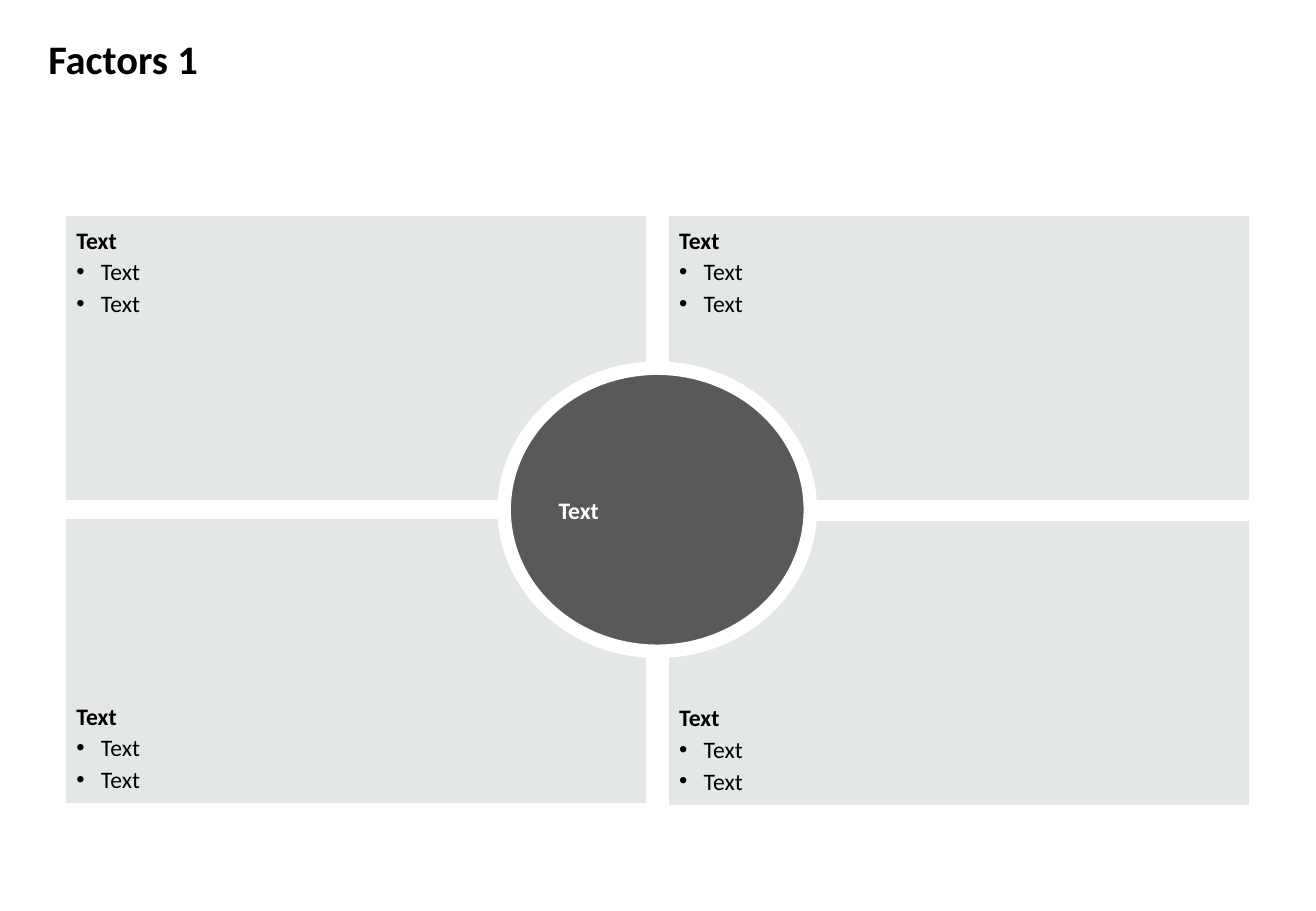
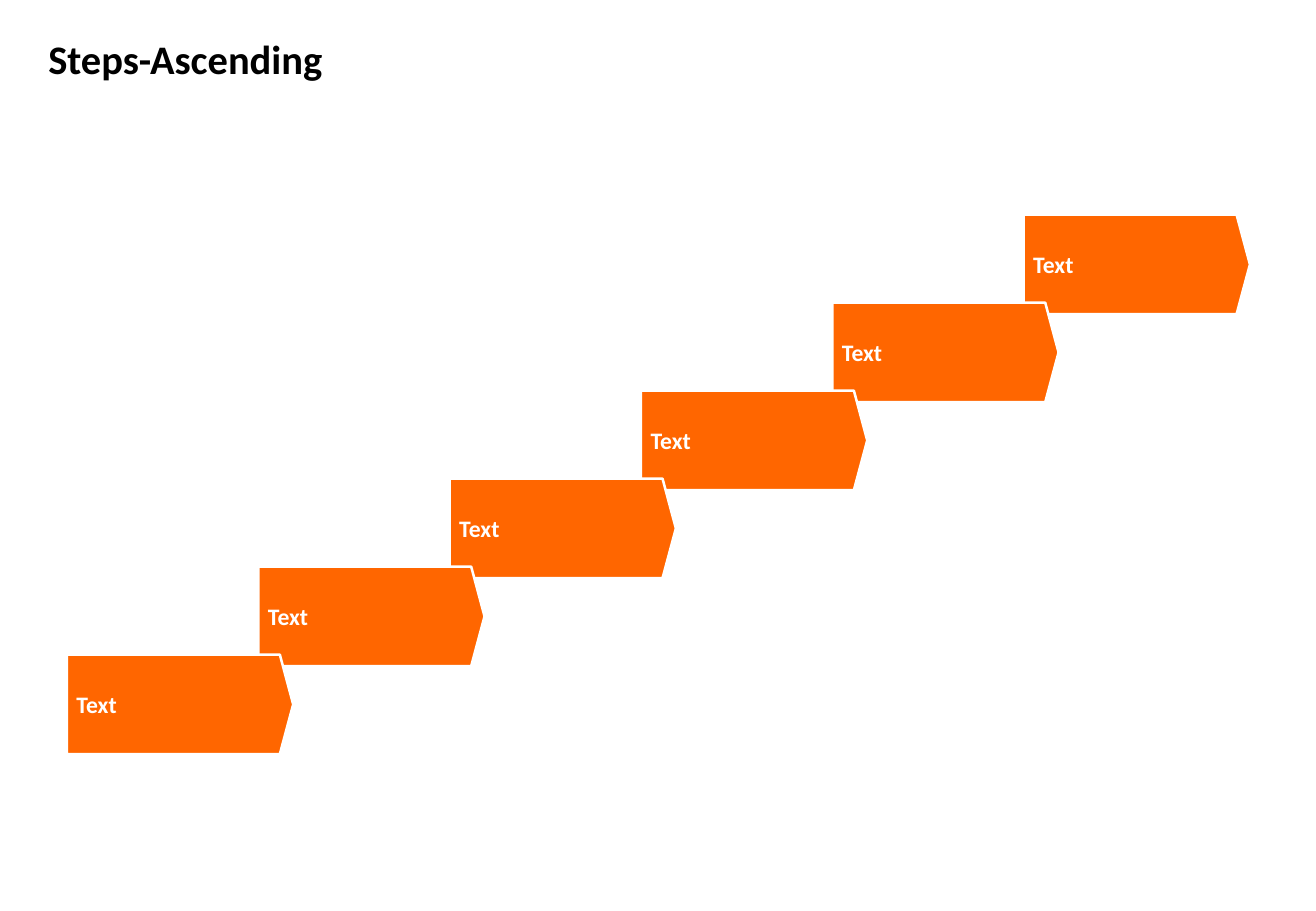
"""Build two slides: four factors around a hub, and ascending steps."""
from lxml import etree
from pptx import Presentation
from pptx.dml.color import RGBColor
from pptx.enum import shapes, text
from pptx.oxml import ns
from pptx.util import Cm, Pt

COLOURS = {"ink": "000000", "paper": "FFFFFF", "panel": "E4E7E7", "hub": "595959", "step": "FF6600"}
FONT = "Calibri"
INSET, HANG = Cm(0.2), Cm(0.51)
TOP, MIDDLE, BOTTOM = (text.MSO_ANCHOR.TOP, text.MSO_ANCHOR.MIDDLE, text.MSO_ANCHOR.BOTTOM)

FACTORS_TITLE = "Factors 1"
FACTORS = [
    {"heading": "Text", "points": ["Text", "Text"], "left": 1.4, "top": 4.52, "anchor": TOP},
    {"heading": "Text", "points": ["Text", "Text"], "left": 1.4, "top": 10.87, "anchor": BOTTOM},
    {"heading": "Text", "points": ["Text", "Text"], "left": 14, "top": 10.9, "anchor": BOTTOM},
    {"heading": "Text", "points": ["Text", "Text"], "left": 14, "top": 4.52, "anchor": TOP},
]
PANEL_SIZE = (12.09, 5.92)
HUB, HUB_AREA = "Text", (10.54, 7.7, 6.4, 5.92)

STEPS_TITLE = "Steps-Ascending"
STEPS = ["Text", "Text", "Text", "Text", "Text", "Text"]
STEP_START, STEP_SHIFT, STEP_SIZE = (1.4, 13.69), (4, -1.84), (4.73, 2.08)
STEP_POINT = 0.134

PANEL_STYLE = {"fill": "panel", "line": "panel", "width": 0.5}
HUB_STYLE = {"fill": "hub", "line": "paper", "width": 8}
STEP_STYLE = {"fill": "step", "line": "paper", "width": 1.5}


def colour(name):
    return RGBColor.from_string(COLOURS[name])


def apply(target, values):
    for name, value in values.items():
        setattr(target, name, value)


def write(para, words, ink, size=14, bold=True):
    para.alignment = text.PP_ALIGN.LEFT
    span = para.add_run()
    span.text = words
    apply(span.font, {"name": FONT, "size": Pt(size), "bold": bold})
    span.font.color.rgb = colour(ink)


def hang(para, bullet=False):
    props = para._p.get_or_add_pPr()
    props.set("marL", str(HANG))
    props.set("indent", str(-HANG))
    if bullet:
        shade = etree.SubElement(props, ns.qn("a:buClr"))
        etree.SubElement(shade, ns.qn("a:srgbClr"), val=COLOURS["ink"])
        etree.SubElement(props, ns.qn("a:buFont"), typeface="Arial")
        etree.SubElement(props, ns.qn("a:buChar"), char="•")


def add_box(parent, kind, area, style, anchor=MIDDLE, wrap=True):
    box = parent.add_shape(kind, *map(Cm, area))
    box.shadow.inherit = False
    box.fill.solid()
    box.fill.fore_color.rgb = colour(style["fill"])
    box.line.color.rgb = colour(style["line"])
    box.line.width = Pt(style["width"])
    sides = ("margin_left", "margin_top", "margin_right", "margin_bottom")
    apply(box.text_frame, dict.fromkeys(sides, INSET))
    apply(box.text_frame, {"vertical_anchor": anchor, "word_wrap": wrap})
    return box


def add_page(deck, title):
    page = deck.slides.add_slide(deck.slide_layouts[6])
    frame = page.shapes.add_textbox(Cm(0.76), Cm(0.81), Cm(26.47), Cm(0.84)).text_frame
    apply(frame, {"word_wrap": True, "vertical_anchor": MIDDLE, "margin_top": 0, "margin_bottom": 0})
    write(frame.paragraphs[0], title, "ink", size=24)
    return page


def build_factors(deck):
    page = add_page(deck, FACTORS_TITLE)
    for factor in FACTORS:
        area = (factor["left"], factor["top"], *PANEL_SIZE)
        panel = add_box(page.shapes, shapes.MSO_SHAPE.RECTANGLE, area, PANEL_STYLE, factor["anchor"])
        frame = panel.text_frame
        for index, words in enumerate([factor["heading"], *factor["points"]]):
            para = frame.add_paragraph() if index else frame.paragraphs[0]
            apply(para, {"space_before": Pt(1), "space_after": Pt(1)})
            write(para, words, "ink", bold=index == 0)
            hang(para, bullet=index > 0)
    hub = add_box(page.shapes, shapes.MSO_SHAPE.OVAL, HUB_AREA, HUB_STYLE)
    para = hub.text_frame.paragraphs[0]
    write(para, HUB, "paper")
    hang(para)


def build_steps(deck):
    page = add_page(deck, STEPS_TITLE)
    stairs = page.shapes.add_group_shape()
    for index, words in reversed(list(enumerate(STEPS))):
        corner = [start + index * shift for start, shift in zip(STEP_START, STEP_SHIFT)]
        step = add_box(stairs.shapes, shapes.MSO_SHAPE.PENTAGON, (*corner, *STEP_SIZE),
                       STEP_STYLE, wrap=False)
        step.adjustments[0] = STEP_POINT
        write(step.text_frame.paragraphs[0], words, "paper")


def main():
    deck = Presentation()
    apply(deck, {"slide_width": Cm(27.51), "slide_height": Cm(19.05)})
    build_factors(deck)
    build_steps(deck)
    deck.save("out.pptx")


if __name__ == "__main__":
    main()
